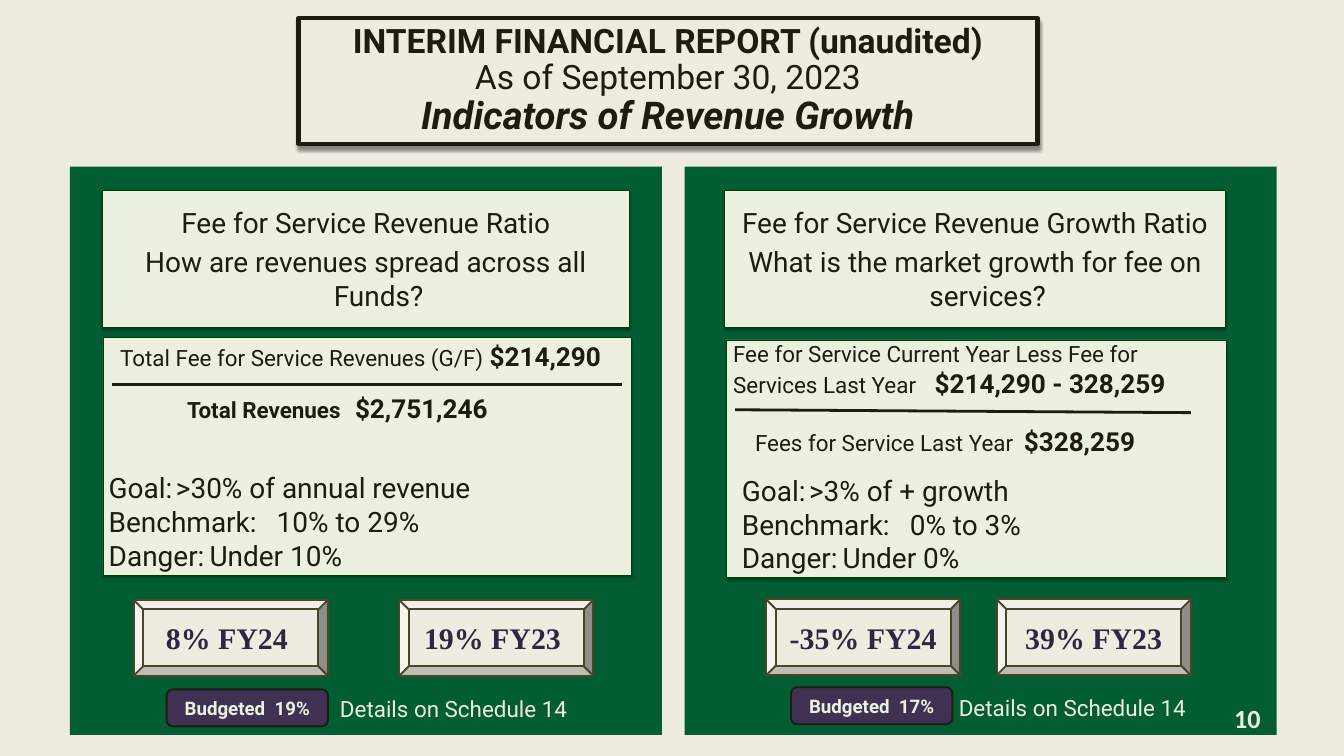
from lxml.etree import SubElement
from pptx import Presentation
from pptx.dml.color import RGBColor
from pptx.enum.shapes import MSO_CONNECTOR, MSO_SHAPE
from pptx.enum.text import MSO_ANCHOR, PP_ALIGN
from pptx.oxml.ns import qn
from pptx.util import Cm, Pt

CREAM = RGBColor(0xEE, 0xEC, 0xE1)
GREEN = RGBColor(0x02, 0x5E, 0x32)
PALE = RGBColor(0xEB, 0xF1, 0xDE)
EDGE = RGBColor(0x00, 0x3E, 0x00)
INK = RGBColor(0x1E, 0x1C, 0x11)
PLUM = RGBColor(0x40, 0x31, 0x52)
GRAPE = RGBColor(0x33, 0x24, 0x40)
BROWN = RGBColor(0x4A, 0x45, 0x2A)

# Font formats
BASE = {"name": "Roboto", "size": Pt(30), "bold": False}
LABEL = {**BASE, "size": Pt(24)}
STRONG = {**LABEL, "bold": True}
MONEY = {**STRONG, "size": Pt(28)}
HEAD = {**BASE, "size": Pt(36)}
TOPIC = {**BASE, "size": Pt(41), "bold": True, "italic": True}
BADGE = {**STRONG, "size": Pt(20)}
RATIO = {"name": "Times New Roman", "size": Pt(32), "bold": True}
FOLIO = {"name": "Calibri", "size": Pt(28), "bold": True}

# Content: a paragraph is (runs, options), a run is (text, font)
TITLE = [
    ("INTERIM FINANCIAL REPORT (unaudited)", {**HEAD, "bold": True}),
    ("As of September 30, 2023", HEAD),
    ("Indicators of Revenue Growth", TOPIC),
]
NOTE = "Details on Schedule 14"
SIDES = [
    {
        "panel": 2.64,
        "head": (3.86, 7.2, 19.94, 5.17),
        "asks": ["Fee for Service Revenue Ratio",
                 "How are revenues spread across all Funds?"],
        "body": (3.89, 12.75, 19.96, 8.99),
        "fees": [
            ([("Total Fee for Service Revenues (G/F)\t", LABEL),
              ("$214,290", MONEY)],
             {"left": 0.4, "tab": 14.95, "before": 5}),
            ([("Total Revenues\t", STRONG), ("$2,751,246", MONEY)],
             {"left": 2.93, "tab": 14.23, "before": 22}),
        ],
        "rule": (4.22, 14.55, 23.5, 14.55),
        "goals": (3.86, 17.68, 19.94, 4.11),
        "tab": 8.13,
        "marks": [("Goal:", ">30% of annual revenue"),
                  ("Benchmark:", "10% to 29%"),
                  ("Danger:", "Under 10%")],
        "rates": [(5.05, "8% FY24 "), (15.09, "19% FY23 ")],
        "rate_y": 22.68,
        "badge": (6.3, 26.06, 6.1, 1.4),
        "plan": "Budgeted  19%",
        "note": (12.6, 26.16, 9.86, 1.27),
    },
    {
        "panel": 25.88,
        "head": (27.38, 7.19, 18.95, 5.18),
        "asks": ["Fee for Service Revenue Growth Ratio",
                 "What is the market growth for fee on services?"],
        "body": (27.46, 12.85, 18.9, 8.99),
        "fee_box": (27.46, 12.75, 18.9, 4.7),
        "fees": [
            ([("Fee for Service Current Year Less Fee for "
               "Services Last Year\t", LABEL),
              ("$214,290 - 328,259", MONEY)], {"tab": 7.97}),
            ([("Fees for Service Last Year\t", LABEL), ("$328,259", MONEY)],
             {"left": 0.83, "tab": 11.22, "before": 28}),
        ],
        "rule": (27.79, 15.49, 45.01, 15.6),
        "goals": (27.79, 17.78, 17.93, 4.11),
        "tab": 6.92,
        "marks": [("Goal:", ">3% of + growth"),
                  ("Benchmark:", "0% to 3%"),
                  ("Danger:", "Under 0%")],
        "rates": [(28.96, "-35% FY24"), (37.67, "39% FY23")],
        "rate_y": 22.66,
        "badge": (29.9, 25.98, 6.1, 1.4),
        "plan": "Budgeted  17%",
        "note": (35.99, 26.11, 9.73, 1.27),
    },
]

deck = Presentation()
deck.slide_width, deck.slide_height = Cm(50.8), Cm(28.58)
slide = deck.slides.add_slide(deck.slide_layouts[6])
slide.background.fill.solid()
slide.background.fill.fore_color.rgb = CREAM
shapes = slide.shapes


def block(kind, at, fill, line=None, width=0, shade=None):
    """Add a filled shape; shade is (opacity %, blur pt, distance pt)."""
    shape = shapes.add_shape(kind, *map(Cm, at))
    shape.shadow.inherit = False
    shape.fill.solid()
    shape.fill.fore_color.rgb = fill
    if line is None:
        shape.line.fill.background()
    else:
        shape.line.color.rgb = line
        shape.line.width = Pt(width)
    if shade:
        alpha, blur, dist = shade
        effects = shape._element.spPr.find(qn("a:effectLst"))
        drop = SubElement(effects, qn("a:outerShdw"), blurRad=str(Pt(blur)),
                          dist=str(Pt(dist)), dir="5400000", rotWithShape="0")
        tone = SubElement(drop, qn("a:srgbClr"), val="000000")
        SubElement(tone, qn("a:alpha"), val=str(alpha * 1000))
    return shape


def write(shape, paras, color, align=PP_ALIGN.LEFT, anchor=MSO_ANCHOR.TOP,
          inset=None):
    frame = shape.text_frame
    frame.word_wrap = True
    frame.vertical_anchor = anchor
    if inset is not None:
        for side in ("left", "right", "top", "bottom"):
            setattr(frame, "margin_" + side, Cm(inset))
    for i, (runs, opts) in enumerate(paras):
        para = frame.add_paragraph() if i else frame.paragraphs[0]
        para.alignment = align
        para.line_spacing = opts.get("lines")
        para.space_before = Pt(opts.get("before", 0))
        props = para._p.get_or_add_pPr()
        props.set("marL", str(Cm(opts.get("left", 0))))
        props.set("indent", str(Cm(opts.get("first", 0))))
        if "tab" in opts:
            tabs = SubElement(props, qn("a:tabLst"))
            SubElement(tabs, qn("a:tab"), pos=str(Cm(opts["tab"])), algn="l")
        for text, font in runs:
            run = para.add_run()
            run.text = text
            run.font.color.rgb = color
            for key, value in font.items():
                setattr(run.font, key, value)


def label(at, paras, color, **opts):
    write(shapes.add_textbox(*map(Cm, at)), paras, color, **opts)


MID = {"align": PP_ALIGN.CENTER, "anchor": MSO_ANCHOR.MIDDLE}
CARD = (PALE, EDGE, 0.75, (35, 3.1, 1.8))

# Title box
box = block(MSO_SHAPE.RECTANGLE, (11.28, 0.69, 27.94, 4.75), CREAM, INK, 4.5,
            (43, 4, 4))
write(box, [([run], {"lines": 0.9}) for run in TITLE], INK, inset=0, **MID)

for side in SIDES:
    # Panel, question card and figures card
    block(MSO_SHAPE.RECTANGLE, (side["panel"], 6.3, 22.38, 21.48), GREEN)
    head = block(MSO_SHAPE.RECTANGLE, side["head"], *CARD)
    hang = {"left": 0.96, "first": -0.96, "before": 6}
    write(head, [([(ask, BASE)], hang) for ask in side["asks"]], INK, **MID)
    body = block(MSO_SHAPE.RECTANGLE, side["body"], *CARD)

    # Fraction with its rule
    if "fee_box" in side:
        label(side["fee_box"], side["fees"], INK)
    else:
        write(body, side["fees"], INK)
    rule = shapes.add_connector(MSO_CONNECTOR.STRAIGHT,
                                *map(Cm, side["rule"]))
    rule.line.color.rgb = INK
    rule.line.width = Pt(3)
    SubElement(rule._element.spPr, qn("a:effectLst"))

    # Goal, benchmark and danger levels
    label(side["goals"], [([(f"{name}\t{level}", BASE)], {"tab": side["tab"]})
                          for name, level in side["marks"]], INK)

    # Ratio buttons
    for x, text in side["rates"]:
        rate = block(MSO_SHAPE.BEVEL, (x, side["rate_y"], 7.34, 2.87),
                     CREAM, BROWN, 2)
        write(rate, [([(text, RATIO)], {})], GRAPE, inset=0.1, **MID)

    # Budget badge and note
    badge = block(MSO_SHAPE.ROUNDED_RECTANGLE, side["badge"], PLUM, INK, 2)
    write(badge, [([(side["plan"], BADGE)], {})], PALE, **MID)
    label(side["note"], [([(NOTE, LABEL)], {})], CREAM)

# Page number
label((46.58, 26.57, 1.07, 1.19), [([("10", FOLIO)], {})], CREAM,
      align=PP_ALIGN.RIGHT, inset=0)

deck.save("out.pptx")
